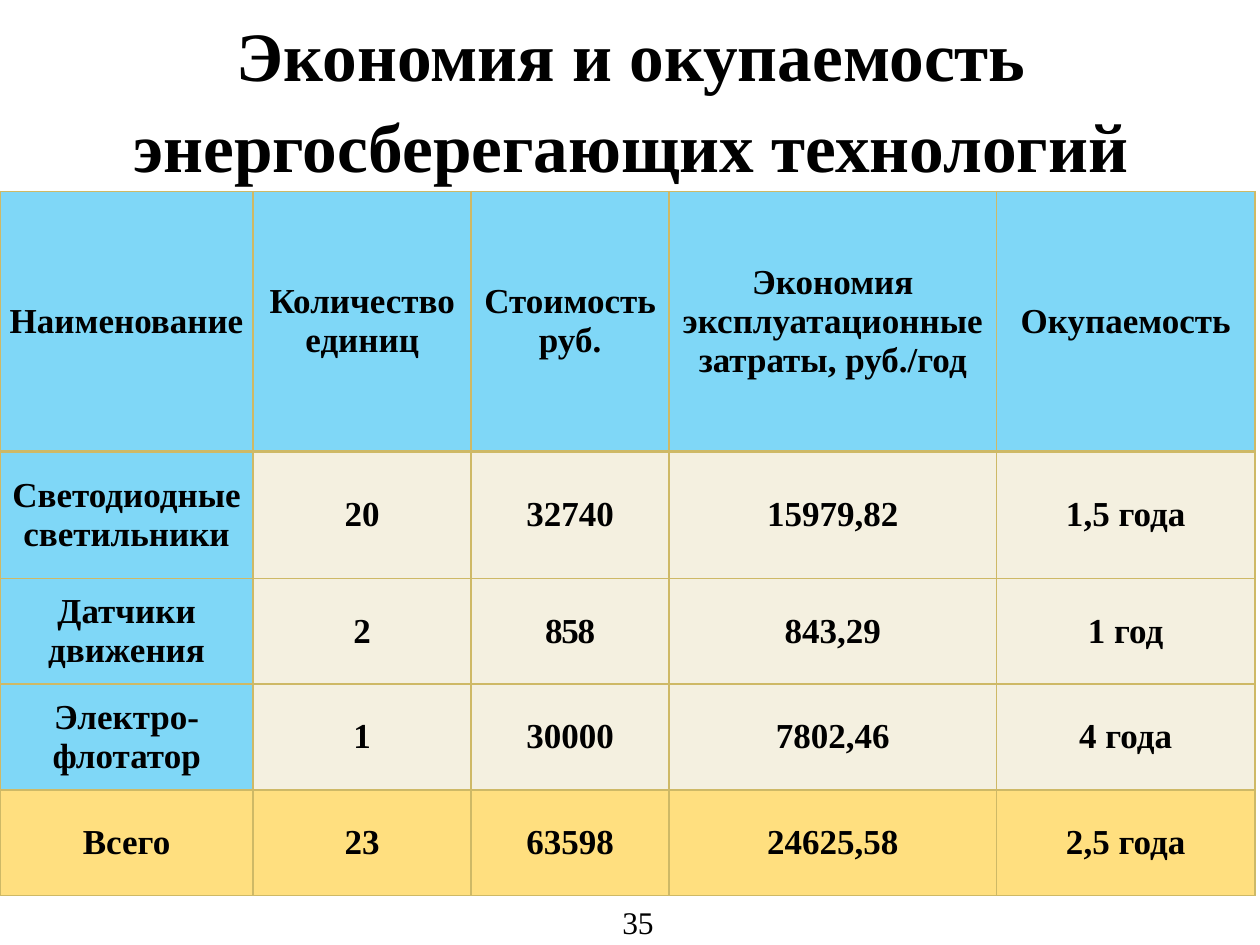
from lxml.etree import SubElement
from pptx import Presentation
from pptx.dml.color import RGBColor as Rgb
from pptx.enum.text import MSO_ANCHOR as Anchor, MSO_AUTO_SIZE as Fit, PP_ALIGN as Align
from pptx.oxml import parse_xml
from pptx.oxml.ns import nsdecls, qn
from pptx.util import Inches, Pt

BLACK = Rgb(0x00, 0x00, 0x00)
BLUE = Rgb(0x00, 0xB0, 0xF0)
CREAM = Rgb(0xEB, 0xE3, 0xC2)
AMBER = Rgb(0xFF, 0xC0, 0x00)
GOLD = Rgb(0xCE, 0xB9, 0x66)
FACE = "Times New Roman"

TITLE = "Экономия и окупаемость энергосберегающих технологий"
COLS = [2.01, 1.73, 1.57, 2.6, 2.05]
ROWS = [2.06, 1.01, 0.84, 0.84, 0.84]
DATA = [
    ["Наименование", "Количество единиц", "Стоимость руб.",
     "Экономия эксплуатационные затраты, руб./год", "Окупаемость"],
    ["Светодиодные светильники", "20", "32740", "15979,82", "1,5 года"],
    ["Датчики движения", "2", "858", "843,29", "1 год"],
    ["Электро-флотатор", "1", "30000", "7802,46", "4 года"],
    ["Всего", "23", "63598", "24625,58", "2,5 года"],
]
TIGHT = {(2, 1), (2, 2)}


def add_run(para, text, size, bold=False):
    run = para.add_run()
    run.text = text
    font = run.font
    font.name, font.size, font.bold = FACE, Pt(size), bold
    font.color.rgb = BLACK
    return run


def set_fill(cell, color):
    cell.fill.solid()
    cell.fill.fore_color.rgb = color
    tone = cell._tc.tcPr.find(".//" + qn("a:srgbClr"))
    SubElement(tone, qn("a:alpha"), val="50000")


def set_edges(cell, base):
    widths = {"L": 1, "R": 1, "T": 1, "B": base}
    for spot, (side, width) in enumerate(widths.items()):
        cell._tc.tcPr.insert(spot, parse_xml(
            f'<a:ln{side} {nsdecls("a")} w="{Pt(width)}"><a:solidFill>'
            f'<a:srgbClr val="{GOLD}"/></a:solidFill></a:ln{side}>'))


def pick_fill(row, col):
    if row == len(DATA) - 1:
        return AMBER
    return BLUE if row == 0 or col == 0 else CREAM


def add_title(slide, left, top, width, height):
    title = slide.shapes.title
    title.left, title.top = Inches(left), Inches(top)
    title.width, title.height = Inches(width), Inches(height)
    frame = title.text_frame
    frame.auto_size = Fit.NONE
    frame.word_wrap = True
    frame.vertical_anchor = Anchor.MIDDLE
    para = frame.paragraphs[0]
    para.alignment = Align.CENTER
    para.line_spacing = 1.1
    add_run(para, TITLE, 39.6, True)


def add_cell(cell, text, row, col):
    cell.margin_left = cell.margin_right = Inches(0.07)
    cell.margin_top = cell.margin_bottom = 0
    cell.vertical_anchor = Anchor.MIDDLE
    set_fill(cell, pick_fill(row, col))
    set_edges(cell, 2 if row == 0 else 1)
    para = cell.text_frame.paragraphs[0]
    para.alignment = Align.CENTER
    run = add_run(para, text, 20, True)
    if (row, col) in TIGHT:
        run.font._element.set("spc", "-80")


def add_grid(slide, left, top, width, height):
    table = slide.shapes.add_table(
        len(ROWS), len(COLS), Inches(left), Inches(top),
        Inches(width), Inches(height)).table
    table.horz_banding = False
    for col, size in zip(table.columns, COLS):
        col.width = Inches(size)
    for row, size in zip(table.rows, ROWS):
        row.height = Inches(size)
    for row, line in enumerate(DATA):
        for col, text in enumerate(line):
            add_cell(table.cell(row, col), text, row, col)


def add_page(slide, left, top, width, height):
    box = slide.shapes.add_textbox(
        Inches(left), Inches(top), Inches(width), Inches(height))
    frame = box.text_frame
    frame.word_wrap = False
    frame.auto_size = Fit.SHAPE_TO_FIT_TEXT
    add_run(frame.paragraphs[0], "35", 18)


def main():
    deck = Presentation()
    deck.slide_width, deck.slide_height = Inches(10), Inches(7.5)
    slide = deck.slides.add_slide(deck.slide_layouts[5])
    add_title(slide, 0.51, 0.13, 9, 1.25)
    add_grid(slide, 0, 1.52, sum(COLS), sum(ROWS))
    add_page(slide, 4.84, 7.12, 0.45, 0.4)
    deck.save("out.pptx")


if __name__ == "__main__":
    main()
